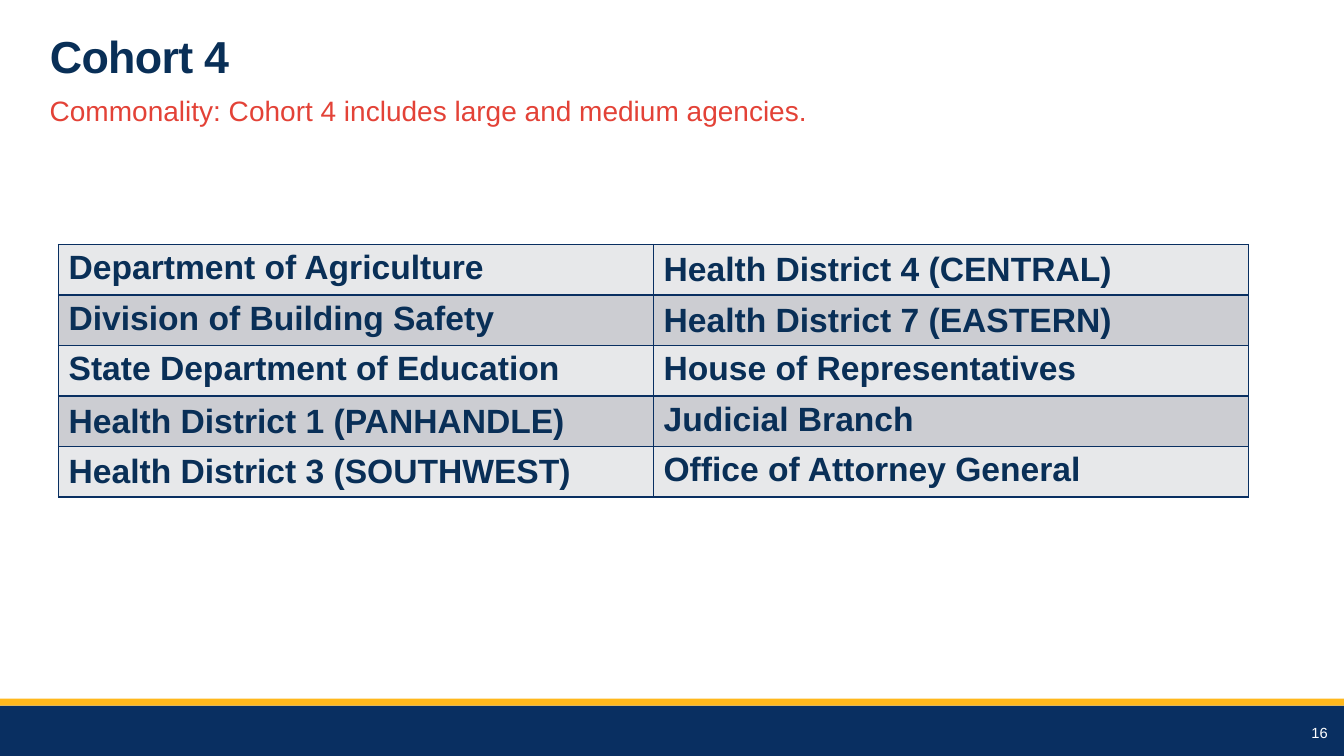
import pptx
import pptx.util
import pptx.dml.color
import pptx.enum.shapes
import pptx.enum.text
import pptx.oxml
from pptx.oxml.ns import nsdecls

Pt = pptx.util.Pt
ANCHOR = pptx.enum.text.MSO_ANCHOR
ALIGN = pptx.enum.text.PP_ALIGN

TITLE = "Cohort 4"
SUBTITLE = "Commonality: Cohort 4 includes large and medium agencies."
PAGE = "16"
AGENCIES = [
    ("Department of Agriculture", "Health District 4 (CENTRAL)"),
    ("Division of Building Safety", "Health District 7 (EASTERN)"),
    ("State Department of Education", "House of Representatives"),
    ("Health District 1 (PANHANDLE)", "Judicial Branch"),
    ("Health District 3 (SOUTHWEST)", "Office of Attorney General"),
]
NAVY, INK, GOLD, RED, WHITE = "092F61", "092F57", "FFB81C", "E34237", "FFFFFF"
BANDS = ["E7E8EA", "CCCDD2"]
# left, top, width, height
BARS = [(NAVY, (0, 504, 960, 36)), (GOLD, (0, 499, 960, 5))]
ROW_H, COL_W = 36.1, 425


def rgb(color):
    return pptx.dml.color.RGBColor.from_string(color)


def pts(box):
    return [Pt(v) for v in box]


def style(p, size, color, bold=False):
    f = p.font
    f.name, f.size, f.bold = "Arial", Pt(size), bold
    f.color.rgb = rgb(color)


def add_text(s, box, text, size, color):
    tf = s.shapes.add_textbox(*pts(box)).text_frame
    tf.word_wrap = True
    p = tf.paragraphs[0]
    p.text = text
    style(p, size, color)
    return tf


def add_borders(cell):
    """Draw a thin navy line on all four sides of the cell."""
    tcPr = cell._tc.get_or_add_tcPr()
    for i, side in enumerate(("lnL", "lnR", "lnT", "lnB")):
        tcPr.insert(i, pptx.oxml.parse_xml(
            f'<a:{side} {nsdecls("a")} w="12700"><a:solidFill>'
            f'<a:srgbClr val="{NAVY}"/></a:solidFill></a:{side}>'))


def add_agencies(s):
    rows, cols = len(AGENCIES), len(AGENCIES[0])
    box = (41.8, 174.6, cols * COL_W, rows * ROW_H)
    frame = s.shapes.add_table(rows, cols, *pts(box))
    table = frame.table
    for col in table.columns:
        col.width = Pt(COL_W)
    for i, names in enumerate(AGENCIES):
        table.rows[i].height = Pt(ROW_H)
        for j, name in enumerate(names):
            cell = table.cell(i, j)
            cell.text = name
            style(cell.text_frame.paragraphs[0], 24, INK, True)
            cell.fill.solid()
            cell.fill.fore_color.rgb = rgb(BANDS[i % 2])
            if name.startswith("Health District"):
                cell.vertical_anchor = ANCHOR.MIDDLE
                cell.margin_top, cell.margin_bottom = Pt(0.75), Pt(0)
            add_borders(cell)


def main():
    prs = pptx.Presentation()
    prs.slide_width, prs.slide_height = Pt(960), Pt(540)
    s = prs.slides.add_slide(prs.slide_layouts[5])

    for color, box in BARS:
        sp = s.shapes.add_shape(pptx.enum.shapes.MSO_SHAPE.RECTANGLE, *pts(box))
        sp.shadow.inherit = False
        sp.fill.solid()
        sp.fill.fore_color.rgb = rgb(color)
        sp.line.fill.background()

    title = s.shapes.title
    title.left, title.top, title.width, title.height = pts((28.4, 22.3, 906, 40.3))
    tf = title.text_frame
    tf.text = TITLE
    tf.vertical_anchor = ANCHOR.BOTTOM
    p = tf.paragraphs[0]
    p.alignment, p.line_spacing = ALIGN.LEFT, 0.85
    style(p, 32, INK, True)
    p.runs[0].font._element.set("spc", "-50")

    tf = add_text(s, (28.4, 61.9, 863, 31), SUBTITLE, 20, RED)
    tf.paragraphs[0].line_spacing = 1.07

    tf = add_text(s, (852.5, 508.6, 103, 28.8), PAGE, 10.5, WHITE)
    tf.vertical_anchor = ANCHOR.MIDDLE
    tf.paragraphs[0].alignment = ALIGN.RIGHT

    add_agencies(s)
    prs.save("out.pptx")


if __name__ == "__main__":
    main()
